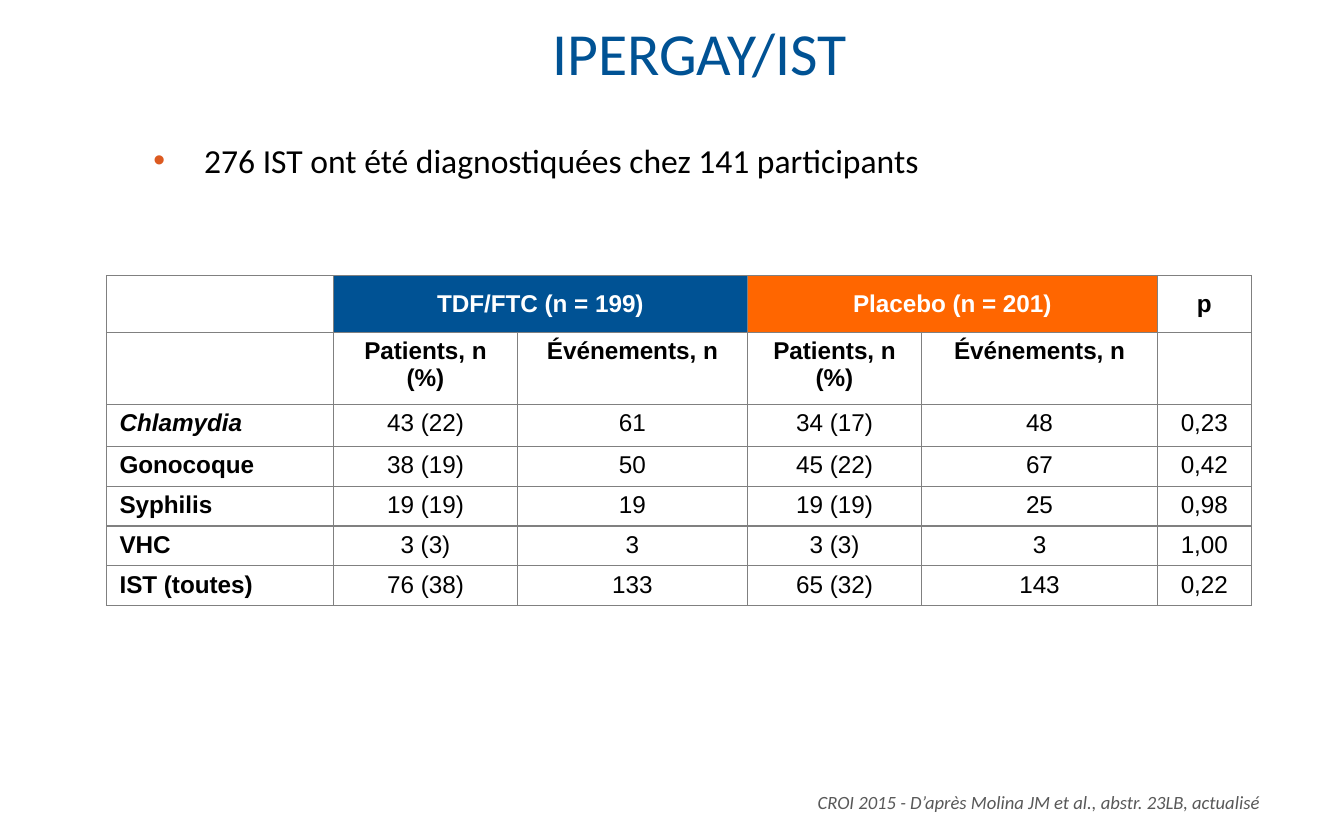
from lxml import etree
from pptx import Presentation
from pptx.dml.color import RGBColor
from pptx.enum.text import MSO_ANCHOR, PP_ALIGN
from pptx.oxml.ns import qn
from pptx.util import Cm, Pt

BLUE = RGBColor(0x00, 0x52, 0x94)
ORANGE = RGBColor(0xFF, 0x66, 0x00)
BULLET = RGBColor(0xDC, 0x5A, 0x20)
GREY = RGBColor(0x59, 0x59, 0x59)
BORDER = RGBColor(0x80, 0x80, 0x80)
WHITE = RGBColor(0xFF, 0xFF, 0xFF)
BLACK = RGBColor(0x00, 0x00, 0x00)
LEFT, CENTER, RIGHT = PP_ALIGN.LEFT, PP_ALIGN.CENTER, PP_ALIGN.RIGHT
TOP, MIDDLE = MSO_ANCHOR.TOP, MSO_ANCHOR.MIDDLE


def write(tf, text, size, color, align, font="Calibri", bold=False, italic=False):
    """Put one formatted paragraph in the text frame and return it."""
    tf.text = text
    tf.word_wrap = True
    p = tf.paragraphs[0]
    p.alignment = align
    f = p.runs[0].font
    f.name, f.size, f.bold, f.italic = font, Pt(size), bold, italic
    f.color.rgb = color
    return p


def add_borders(cell):
    tcPr = cell._tc.get_or_add_tcPr()
    for side in ("a:lnL", "a:lnR", "a:lnT", "a:lnB"):
        ln = etree.SubElement(tcPr, qn(side), w=str(Pt(0.75)))
        fill = etree.SubElement(ln, qn("a:solidFill"))
        etree.SubElement(fill, qn("a:srgbClr"), val=str(BORDER))


prs = Presentation()
prs.slide_width, prs.slide_height = Cm(25.4), Cm(15.88)
s = prs.slides.add_slide(prs.slide_layouts[5])

# Title
title = s.shapes.title
title.left, title.top, title.width, title.height = Cm(2.95), Cm(0.56), Cm(20.55), Cm(1.4)
tf = title.text_frame
tf.margin_left = tf.margin_right = tf.margin_top = tf.margin_bottom = 0
tf.vertical_anchor = MIDDLE
p = write(tf, "IPERGAY/IST", 32, BLUE, CENTER)
p.line_spacing = Pt(22)

# Key message
tf = s.shapes.add_textbox(Cm(2.9), Cm(2.64), Cm(21.23), Cm(1.2)).text_frame
tf.margin_left = tf.margin_right = tf.margin_top = tf.margin_bottom = 0
p = write(tf, "276 IST ont été diagnostiquées chez 141 participants", 18, BLACK, LEFT)
pPr = p._p.get_or_add_pPr()
pPr.set("marL", str(Cm(0.96)))
pPr.set("indent", str(-Cm(0.96)))
color = etree.SubElement(pPr, qn("a:buClr"))
etree.SubElement(color, qn("a:srgbClr"), val=str(BULLET))
etree.SubElement(pPr, qn("a:buFont"), typeface="Arial")
etree.SubElement(pPr, qn("a:buChar"), char="•")

# Table of infections by treatment arm
rows = [
    ["", "TDF/FTC (n\u00a0= 199)", "", "Placebo (n\u00a0=\u00a0201)", "", "p"],
    ["", "Patients, n (%)", "Événements, n", "Patients, n (%)", "Événements, n", ""],
    ["Chlamydia", "43 (22)", "61", "34 (17)", "48", "0,23"],
    ["Gonocoque", "38 (19)", "50", "45 (22)", "67", "0,42"],
    ["Syphilis", "19 (19)", "19", "19 (19)", "25", "0,98"],
    ["VHC", "3 (3)", "3", "3 (3)", "3", "1,00"],
    ["IST (toutes)", "76 (38)", "133", "65 (32)", "143", "0,22"],
]
widths = [4.29, 3.48, 4.34, 3.3, 4.45, 1.78]
heights = [1.07, 1.37, 0.79] + [0.74] * 4
arm_fills = {1: BLUE, 3: ORANGE}

table = s.shapes.add_table(len(rows), len(widths), Cm(2.01), Cm(5.21),
                           Cm(sum(widths)), Cm(sum(heights))).table
table.first_row = table.horz_banding = False
for column, width in zip(table.columns, widths):
    column.width = Cm(width)
for row, height in zip(table.rows, heights):
    row.height = Cm(height)

for i, row in enumerate(rows):
    for j, text in enumerate(row):
        cell = table.cell(i, j)
        cell.margin_left = cell.margin_right = Cm(0.25)
        cell.margin_top = cell.margin_bottom = Cm(0.1)
        cell.vertical_anchor = MIDDLE if i == 0 else TOP
        add_borders(cell)
        is_arm = i == 0 and j in arm_fills
        if is_arm:
            cell.fill.solid()
            cell.fill.fore_color.rgb = arm_fills[j]
        else:
            cell.fill.background()
        if text:
            write(cell.text_frame, text, 13, WHITE if is_arm else BLACK,
                  CENTER if j else LEFT, "Arial",
                  bold=i < 2 or j == 0, italic=text == "Chlamydia")
for j in arm_fills:
    table.cell(0, j).merge(table.cell(0, j + 1))

# Source
tf = s.shapes.add_textbox(Cm(7.7), Cm(14.81), Cm(16.35), Cm(0.7)).text_frame
tf.vertical_anchor = MIDDLE
write(tf, "CROI 2015 - D’après Molina JM et al., abstr. 23LB, actualisé",
      10, GREY, RIGHT, italic=True)

prs.save("out.pptx")
